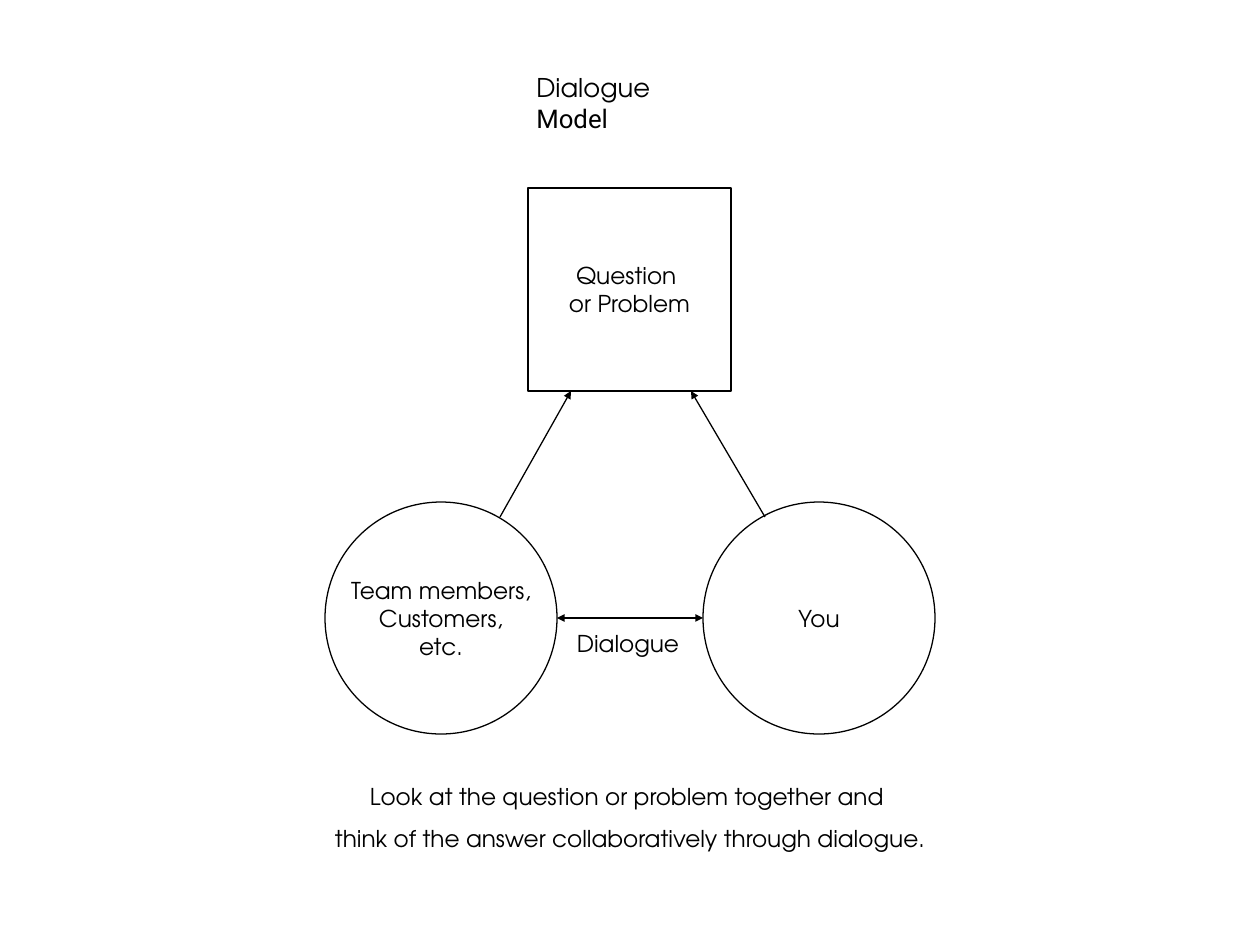
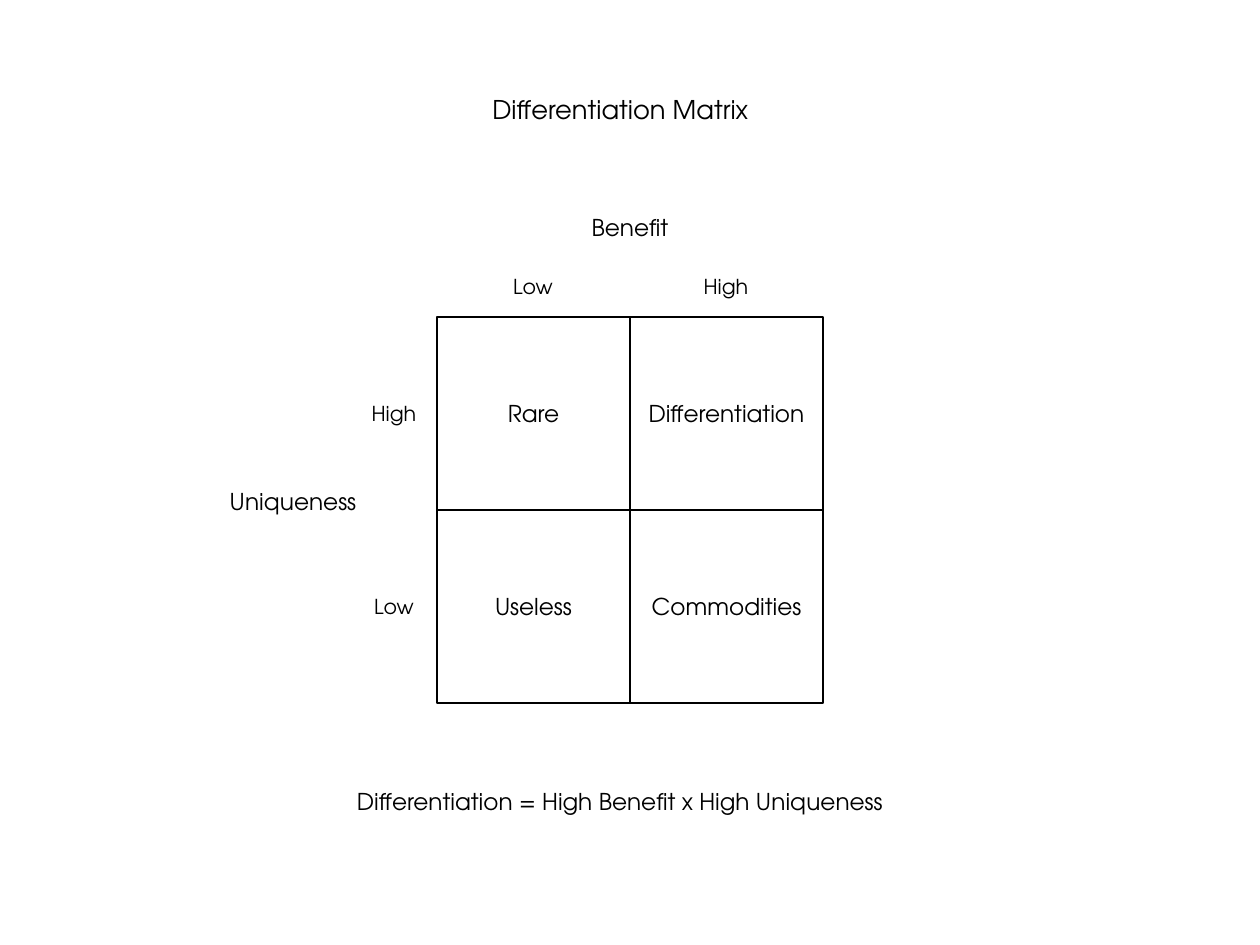
from itertools import product

from lxml import etree
from pptx import Presentation
from pptx import util as u
from pptx.dml.color import RGBColor
from pptx.enum import shapes, text
from pptx.oxml import ns

PX = 9864
WIDTH, HEIGHT = 1260, 945
BLACK = RGBColor(0, 0, 0)
FONT, SECOND_FONT = "TeX Gyre Adventor", "Roboto"
TITLE_SIZE, BODY_SIZE, LABEL_SIZE = 20, 18, 16
CENTER, LEFT = text.PP_ALIGN.CENTER, text.PP_ALIGN.LEFT
MIDDLE, TOP = text.MSO_ANCHOR.MIDDLE, text.MSO_ANCHOR.TOP
OVAL, SQUARE = shapes.MSO_SHAPE.OVAL, shapes.MSO_SHAPE.RECTANGLE

DIALOGUE_TITLE = ["Dialogue", "Model"]
DIALOGUE_NODES = [
    (OVAL, (703, 502), 232, ["You"]),
    (OVAL, (325, 502), 232, ["Team members,", "Customers,", "etc."]),
    (SQUARE, (528, 188), 203, ["Question ", "or Problem"]),
]
DIALOGUE_ARROWS = [
    ((500, 517), (571, 391), ["tailEnd"]),
    ((765, 517), (691, 391), ["tailEnd"]),
    ((557, 618), (703, 618), ["headEnd", "tailEnd"]),
]
DIALOGUE_LABEL = "Dialogue"
DIALOGUE_CAPTION = [
    "Look at the question or problem together and ",
    "think of the answer collaboratively through dialogue.",
]

MATRIX_TITLE = ["Differentiation Matrix"]
MATRIX_CELLS = [["Rare", "Differentiation"], ["Useless", "Commodities"]]
COLUMN_AXIS, COLUMN_LABELS = "Benefit", ["Low", "High"]
ROW_AXIS, ROW_LABELS = "Uniqueness", ["High", "Low"]
MATRIX_CAPTION = "Differentiation = High Benefit x High Uniqueness"
MATRIX_LEFT, MATRIX_TOP, CELL = 437, 317, 193


def px(*lengths):
    return [u.Emu(length * PX) for length in lengths]


def write(frame, lines, size=BODY_SIZE, fonts=(FONT,), align=CENTER,
          anchor=MIDDLE, spacing=None, wrap=True):
    frame.word_wrap = wrap
    frame.auto_size = text.MSO_AUTO_SIZE.NONE
    frame.vertical_anchor = anchor
    for index, line in enumerate(lines):
        para = frame.add_paragraph() if index else frame.paragraphs[0]
        para.alignment = align
        para.line_spacing = spacing
        span = para.add_run()
        span.text = line
        span.font.name = fonts[index % len(fonts)]
        span.font.size = u.Pt(size)
        span.font.color.rgb = BLACK


def add_page(deck, lines, left, top, width, height, fonts=(FONT,)):
    page = deck.slides.add_slide(deck.slide_layouts[5])
    title = page.shapes.title
    title.left, title.top, title.width, title.height = px(left, top, width, height)
    write(title.text_frame, lines, size=TITLE_SIZE, fonts=fonts, align=LEFT, anchor=TOP)
    return page


def add_label(page, lines, center, width, height=38, **style):
    x, y = center
    box = page.shapes.add_textbox(*px(x - width // 2, y - height // 2, width, height))
    write(box.text_frame, lines, **style)


def add_outline(page, kind, corner, side, lines=()):
    shape = page.shapes.add_shape(kind, *px(*corner, side, side))
    shape.shadow.inherit = False
    shape.fill.background()
    shape.line.color.rgb = BLACK
    shape.line.width = u.Pt(1)
    write(shape.text_frame, lines, wrap=False)


def add_line(page, start, end, heads=()):
    line = page.shapes.add_connector(shapes.MSO_CONNECTOR.STRAIGHT, *px(*start, *end))
    line.line.color.rgb = BLACK
    line.line.width = u.Pt(1)
    stroke = line.line._get_or_add_ln()
    for head in heads:
        etree.SubElement(stroke, ns.qn("a:" + head), type="triangle")
    etree.SubElement(line._element.spPr, ns.qn("a:effectLst"))


def build_dialogue(deck):
    page = add_page(deck, DIALOGUE_TITLE, 527, 67, 206, 72, fonts=(FONT, SECOND_FONT))
    add_label(page, DIALOGUE_CAPTION, (630, 810), 630, 88, spacing=1.5)
    for node in DIALOGUE_NODES:
        add_outline(page, *node)
    for arrow in DIALOGUE_ARROWS:
        add_line(page, *arrow)
    add_label(page, [DIALOGUE_LABEL], (628, 643), 140)


def build_matrix(deck):
    page = add_page(deck, MATRIX_TITLE, 483, 89, 300, 41)
    middle_x, middle_y = MATRIX_LEFT + CELL, MATRIX_TOP + CELL
    right, bottom = middle_x + CELL, middle_y + CELL
    columns = [MATRIX_LEFT + CELL // 2, middle_x + CELL // 2]
    rows = [MATRIX_TOP + CELL // 2, middle_y + CELL // 2]

    add_outline(page, SQUARE, (MATRIX_LEFT, MATRIX_TOP), 2 * CELL)
    add_line(page, (middle_x, MATRIX_TOP), (middle_x, bottom))
    add_line(page, (MATRIX_LEFT, middle_y), (right, middle_y))
    for row, column in product(range(2), repeat=2):
        add_label(page, [MATRIX_CELLS[row][column]], (columns[column], rows[row]), CELL)
    for label, x in zip(COLUMN_LABELS, columns):
        add_label(page, [label], (x, 286), 80, size=LABEL_SIZE)
    for label, y in zip(ROW_LABELS, rows):
        add_label(page, [label], (394, y), 80, size=LABEL_SIZE)
    add_label(page, [COLUMN_AXIS], (middle_x, 227), 120)
    add_label(page, [ROW_AXIS], (293, 501), 170)
    add_label(page, [MATRIX_CAPTION], (620, 801), 600)


def main():
    deck = Presentation()
    deck.slide_width, deck.slide_height = px(WIDTH, HEIGHT)
    build_dialogue(deck)
    build_matrix(deck)
    deck.save("out.pptx")


if __name__ == "__main__":
    main()
